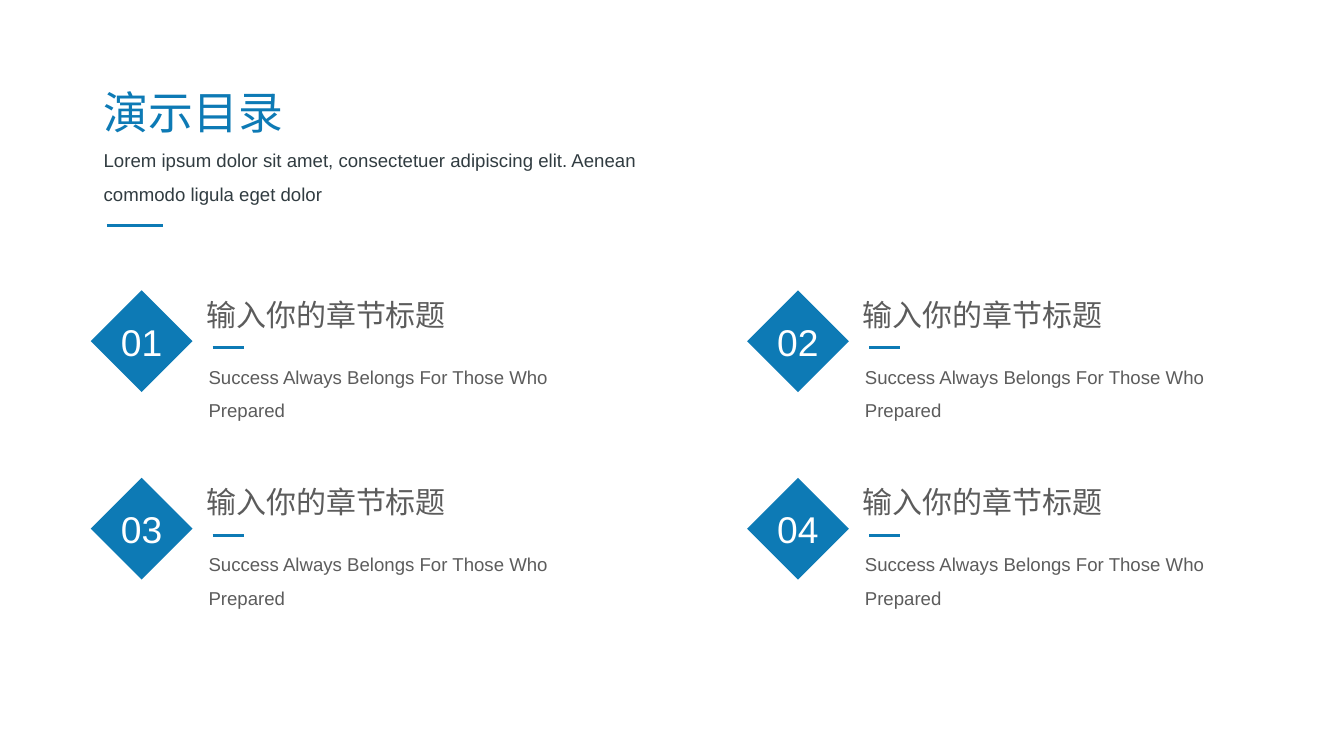
from lxml import etree
from pptx import Presentation
from pptx.dml.color import RGBColor
from pptx.enum.shapes import MSO_CONNECTOR, MSO_SHAPE
from pptx.enum.text import MSO_ANCHOR, MSO_AUTO_SIZE, PP_ALIGN
from pptx.oxml.ns import qn
from pptx.util import Pt

PX = 9144  # 100 px to the inch
LEFT, CENTER = PP_ALIGN.LEFT, PP_ALIGN.CENTER
TOP, MIDDLE = MSO_ANCHOR.TOP, MSO_ANCHOR.MIDDLE
GROW, FIXED = MSO_AUTO_SIZE.SHAPE_TO_FIT_TEXT, MSO_AUTO_SIZE.NONE
DIAMOND, STRAIGHT = MSO_SHAPE.DIAMOND, MSO_CONNECTOR.STRAIGHT

BLUE, DARK, GRAY, WHITE = "0D7AB5", "313C41", "5C5C5C", "FFFFFF"


def px(*sizes):
    return [size * PX for size in sizes]


def color(code):
    return RGBColor.from_string(code)


def write(frame, text, size=13.3, ink=GRAY, align=LEFT, anchor=TOP,
          wrap=False, space=1.0, fit=GROW):
    frame.word_wrap = wrap
    frame.auto_size = fit
    frame.vertical_anchor = anchor
    para = frame.paragraphs[0]
    para.alignment = align
    para.line_spacing = space
    run = para.add_run()
    run.text = text
    run.font.name = "Arial"
    run.font.size = Pt(size)
    run.font.color.rgb = color(ink)


class Page:
    def __init__(self, deck, accent):
        self.slide = deck.slides.add_slide(deck.slide_layouts[5])
        self.shapes = self.slide.shapes
        self.accent = accent

    def title(self, text, x, y, w, h):
        box = self.shapes.title
        box.left, box.top, box.width, box.height = px(x, y, w, h)
        write(box.text_frame, text, size=32, ink=self.accent)

    def text(self, text, x, y, w, h, **style):
        box = self.shapes.add_textbox(*px(x, y, w, h))
        write(box.text_frame, text, **style)

    def rule(self, x, y, w):
        line = self.shapes.add_connector(STRAIGHT, *px(x, y, x + w, y))
        line.line.color.rgb = color(self.accent)
        line.line.width = Pt(2)
        etree.SubElement(line._element.spPr, qn("a:effectLst"))

    def badge(self, text, x, y, side):
        shape = self.shapes.add_shape(DIAMOND, *px(x, y, side, side))
        shape.shadow.inherit = False
        shape.fill.solid()
        shape.fill.fore_color.rgb = color(self.accent)
        shape.line.fill.background()
        write(shape.text_frame, text, size=26.6, ink=WHITE,
              align=CENTER, anchor=MIDDLE, fit=FIXED)

    def chapter(self, number, name, note, x, y):
        self.badge(number, x, y, 101)
        self.text(name, x + 105, y + 1, 260, 46, size=21.4)
        self.rule(x + 121, y + 57, 31)
        self.text(note, x + 107, y + 59, 436, 73, wrap=True, space=1.5)


def main():
    deck = Presentation()
    deck.slide_width, deck.slide_height = px(1333, 750)
    page = Page(deck, BLUE)

    # Heading
    page.title("演示目录", 93, 79, 200, 64)
    page.text("Lorem ipsum dolor sit amet, consectetuer adipiscing elit. "
              "Aenean commodo ligula eget dolor",
              93, 132, 554, 73, ink=DARK, wrap=True, space=1.5)
    page.rule(106, 224, 56)

    # Chapters in a two by two grid
    for i in range(4):
        row, col = divmod(i, 2)
        page.chapter(f"{i + 1:02}", "输入你的章节标题",
                     "Success Always Belongs For Those Who Prepared",
                     90 + 651 * col, 288 + 186 * row)

    deck.save("out.pptx")


if __name__ == "__main__":
    main()
